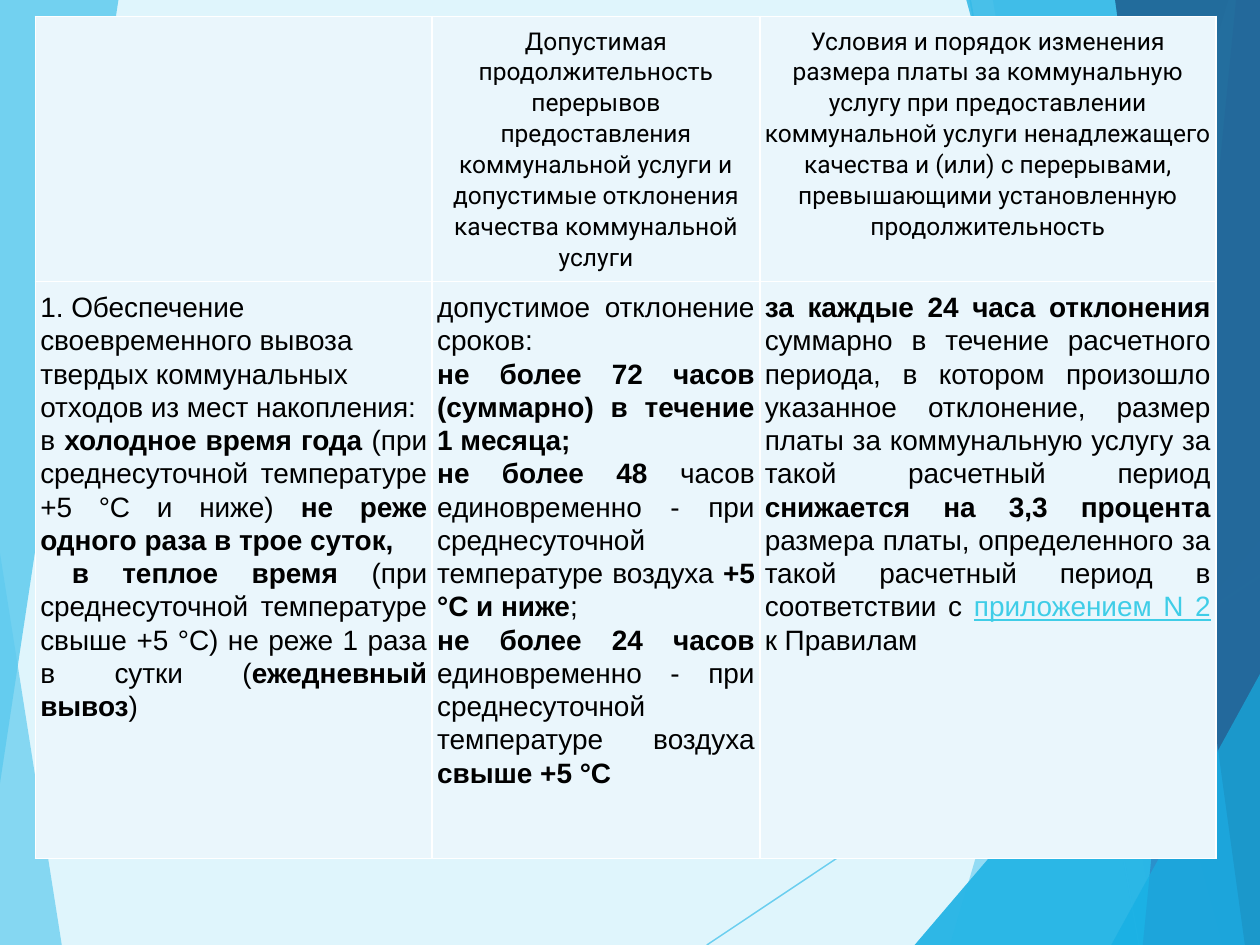
from itertools import product

from lxml.etree import SubElement
from pptx import Presentation
from pptx.dml.color import RGBColor
from pptx.enum.shapes import MSO_CONNECTOR
from pptx.enum.text import PP_ALIGN
from pptx.oxml import parse_xml
from pptx.oxml.ns import nsdecls, qn
from pptx.util import Inches, Pt

WIDE, HIGH = Inches(10), Inches(7.5)
BACK = RGBColor(0xDF, 0xF5, 0xFC)
SKY = RGBColor(0x5F, 0xCB, 0xEF)
AZURE = RGBColor(0x17, 0xB0, 0xE4)
BLUE = RGBColor(0x2E, 0x83, 0xC3)
NAVY = RGBColor(0x22, 0x62, 0x92)
PALE = RGBColor(0xEA, 0xF6, 0xFC)
LINK = RGBColor(0x3F, 0xCD, 0xE7)
BLACK = RGBColor(0, 0, 0)

LEFT, CENTER, JUSTIFY = PP_ALIGN.LEFT, PP_ALIGN.CENTER, PP_ALIGN.JUSTIFY
PLAIN, BOLD, REF = "plain", "bold", "ref"

RAYS = [((56.1, 100), (100, 60.93)), ((77, 0), (90.4, 100))]
PANELS = [
    (SKY, 36, [(97.5, 0), (75.4, 100), (100, 100), (100, 0)]),
    (SKY, 20, [(78.8, 0), (91.9, 100), (100, 100), (100, 0)]),
    (AZURE, 66, [(72.6, 100), (100, 57.2), (100, 100)]),
    (AZURE, 50, [(76.7, 0), (97, 100), (100, 100), (100, 0)]),
    (BLUE, 70, [(98.1, 0), (90.7, 100), (100, 100), (100, 0)]),
    (NAVY, 82, [(88.5, 0), (98.8, 100), (100, 100), (100, 0)]),
    (AZURE, 66, [(88.2, 100), (100, 71.33), (100, 100)]),
]
FOOT = (SKY, 70, [(0, 58.53), (4.9, 100), (0, 100)])
CORNER = (SKY, 85, [(0, 0), (9.4, 0), (0, 82.93)])

COLS = [31.5, 26, 36.2]
ROWS = [27.07, 61.07]
FONTS = [("Roboto", 14), ("Arial", 16)]
CELLS = [
    [
        [],
        [(CENTER, 0, [("Допустимая продолжительность перерывов предоставления коммунальной услуги "
                       "и допустимые отклонения качества коммунальной услуги", PLAIN)])],
        [(CENTER, 0, [("Условия и порядок изменения размера платы за коммунальную услугу при "
                       "предоставлении коммунальной услуги ненадлежащего качества и (или) с "
                       "перерывами, превышающими установленную продолжительность", PLAIN)])],
    ],
    [
        [
            (LEFT, 0, [("1. Обеспечение своевременного вывоза твердых коммунальных отходов "
                        "из мест накопления:", PLAIN)]),
            (JUSTIFY, 0, [("в ", PLAIN), ("холодное время года ", BOLD),
                          ("(при среднесуточной температуре +5 °C и ниже) ", PLAIN),
                          ("не реже одного раза в трое суток,", BOLD)]),
            (JUSTIFY, 0.25, [("в теплое время ", BOLD),
                             ("(при среднесуточной температуре свыше +5 °C) "
                              "не реже 1 раза в сутки (", PLAIN),
                             ("ежедневный вывоз", BOLD), (")", PLAIN)]),
        ],
        [
            (JUSTIFY, 0, [("допустимое отклонение сроков:", PLAIN)]),
            (JUSTIFY, 0, [("не более 72 часов (суммарно) в течение 1 месяца;", BOLD)]),
            (JUSTIFY, 0, [("не более 48 ", BOLD),
                          ("часов единовременно - при среднесуточной температуре воздуха ", PLAIN),
                          ("+5 °C и ниже", BOLD), (";", PLAIN)]),
            (JUSTIFY, 0, [("не более 24 часов ", BOLD),
                          ("единовременно - при среднесуточной температуре воздуха ", PLAIN),
                          ("свыше +5 °C", BOLD)]),
        ],
        [
            (JUSTIFY, 0, [("за каждые 24 часа отклонения ", BOLD),
                          ("суммарно в течение расчетного периода, в котором произошло указанное "
                           "отклонение, размер платы за коммунальную услугу за такой расчетный "
                           "период ", PLAIN),
                          ("снижается на 3,3 процента ", BOLD),
                          ("размера платы, определенного за такой расчетный период "
                           "в соответствии с ", PLAIN),
                          ("приложением N 2", REF), (" к Правилам", PLAIN)]),
        ],
    ],
]


def across(share):
    """Turn a percentage of the slide width into a length."""
    return round(WIDE * share / 100)


def down(share):
    """Turn a percentage of the slide height into a length."""
    return round(HIGH * share / 100)


def fade(shape, alpha):
    """Set the opacity of every colour in a shape, in percent."""
    for tone in shape._element.spPr.iter(qn("a:srgbClr")):
        SubElement(tone, qn("a:alpha")).set("val", str(alpha * 1000))


def add_panel(slide, color, alpha, points):
    """Draw a translucent polygon."""
    first, *rest = [(across(x), down(y)) for x, y in points]
    pen = slide.shapes.build_freeform(*first)
    pen.add_line_segments(rest, close=True)
    panel = pen.convert_to_shape()
    panel.shadow.inherit = False
    panel.fill.solid()
    panel.fill.fore_color.rgb = color
    panel.line.fill.background()
    fade(panel, alpha)


def add_ray(slide, start, end):
    """Draw a thin translucent line."""
    ends = [across(start[0]), down(start[1]), across(end[0]), down(end[1])]
    ray = slide.shapes.add_connector(MSO_CONNECTOR.STRAIGHT, *ends)
    ray.line.color.rgb = SKY
    ray.line.width = Pt(0.75)
    fade(ray, 70)
    SubElement(ray._element.spPr, qn("a:effectLst"))


def add_fan(slide):
    """Draw the rays and panels of the right side."""
    for start, end in RAYS:
        add_ray(slide, start, end)
    for panel in PANELS:
        add_panel(slide, *panel)


def add_text(par, text, kind, font, size):
    """Add one run of text in the given style."""
    run = par.add_run()
    run.text = text
    run.font.name = font
    run.font.size = Pt(size)
    run.font.bold = kind == BOLD
    run.font.underline = kind == REF
    run.font.color.rgb = LINK if kind == REF else BLACK


def frame_cell(cell):
    """Fill a cell and give it white borders and narrow margins."""
    cell.margin_left = cell.margin_right = Inches(0.04)
    cell.margin_top = cell.margin_bottom = Inches(0.07)
    props = cell._tc.get_or_add_tcPr()
    for side in ("lnL", "lnR", "lnT", "lnB"):
        props.append(parse_xml(
            f'<a:{side} {nsdecls("a")} w="12700"><a:solidFill>'
            f'<a:srgbClr val="FFFFFF"/></a:solidFill></a:{side}>'))
    cell.fill.solid()
    cell.fill.fore_color.rgb = PALE


def fill_cell(cell, pars, font, size):
    """Write the paragraphs of a cell."""
    frame = cell.text_frame
    for index, (align, indent, runs) in enumerate(pars):
        par = frame.add_paragraph() if index else frame.paragraphs[0]
        par.alignment = align
        par.line_spacing = 1.07
        if indent:
            par._p.get_or_add_pPr().set("indent", str(Inches(indent)))
        for text, kind in runs:
            add_text(par, text, kind, font, size)


def add_grid(slide):
    """Add the table of rules."""
    grid = slide.shapes.add_table(
        len(ROWS), len(COLS), across(2.8), down(1.73),
        across(sum(COLS)), down(sum(ROWS))).table
    grid.first_row = grid.horz_banding = False
    for col, share in zip(grid.columns, COLS):
        col.width = across(share)
    for row, share in zip(grid.rows, ROWS):
        row.height = down(share)
    for r, c in product(range(len(ROWS)), range(len(COLS))):
        frame_cell(grid.cell(r, c))
        fill_cell(grid.cell(r, c), CELLS[r][c], *FONTS[r])


def main():
    """Build the slide and save it."""
    deck = Presentation()
    deck.slide_width, deck.slide_height = WIDE, HIGH
    slide = deck.slides.add_slide(deck.slide_layouts[6])
    slide.background.fill.solid()
    slide.background.fill.fore_color.rgb = BACK
    add_panel(slide, *FOOT)
    for _ in range(2):
        add_fan(slide)
    add_panel(slide, *CORNER)
    add_grid(slide)
    deck.save("out.pptx")


if __name__ == "__main__":
    main()
